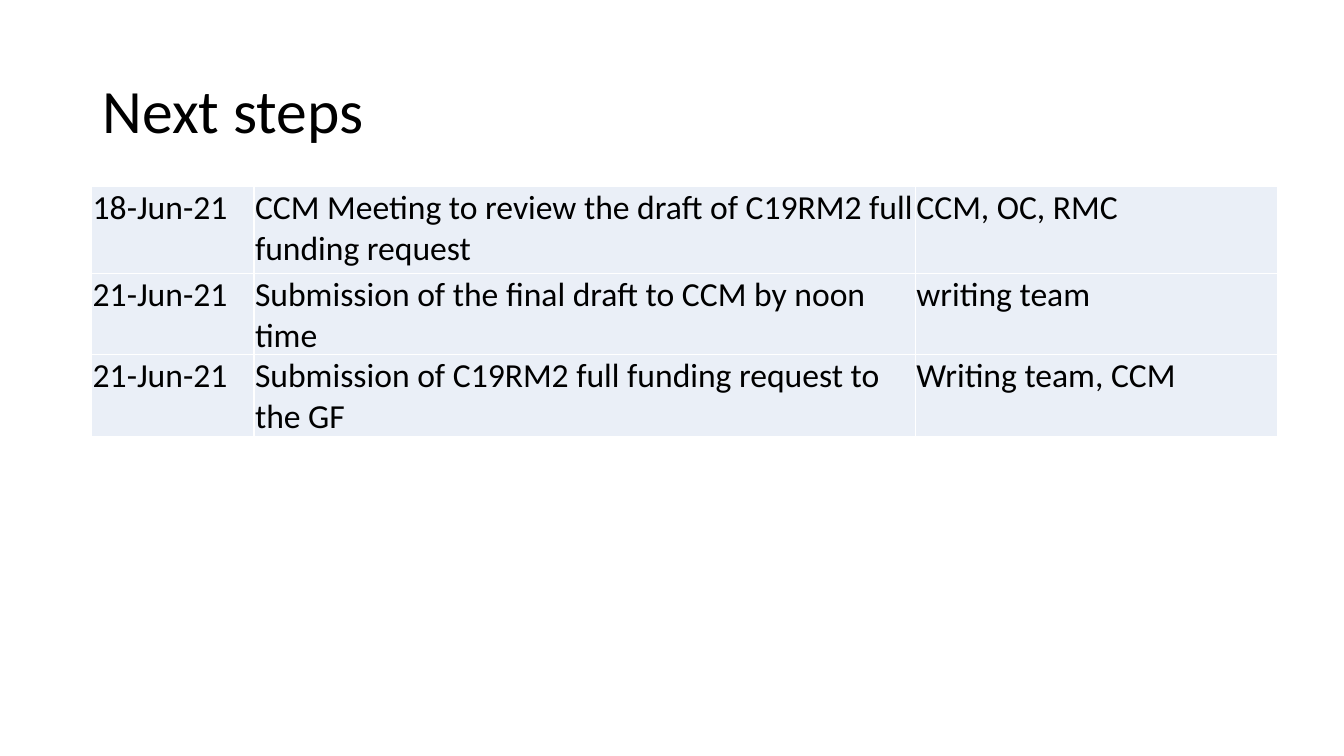
"""Build the "Next steps" slide: a title above a table of dates, tasks and owners."""
from lxml import etree
from pptx import Presentation, util as u
from pptx.dml.color import RGBColor
from pptx.enum import text
from pptx.oxml.ns import qn


def paint(color_format, value):
    color_format.rgb = RGBColor.from_string(value)


def write(paragraph, words, size):
    paragraph.text = words
    for key, value in {"name": "Calibri", "size": u.Pt(size), "bold": False}.items():
        setattr(paragraph.font, key, value)
    paint(paragraph.font.color, "000000")


deck = Presentation()
deck.slide_width, deck.slide_height = u.Inches(13.33), u.Inches(7.5)
slide = deck.slides.add_slide(deck.slide_layouts[6])

title = slide.shapes.add_textbox(
    u.Inches(0.92), u.Inches(0.4), u.Inches(11.5), u.Inches(1.45)
).text_frame
title.word_wrap = True
title.vertical_anchor = text.MSO_ANCHOR.MIDDLE
title.paragraphs[0].line_spacing = 0.9
write(title.paragraphs[0], "Next steps", 44)

steps = [
    ("18-Jun-21", "CCM Meeting to review the draft of C19RM2 full funding request", "CCM, OC, RMC"),
    ("21-Jun-21", "Submission of the final draft to CCM by noon time", "writing team"),
    ("21-Jun-21", "Submission of C19RM2 full funding request to the GF", "Writing team, CCM"),
]
column_widths = [1.61, 6.56, 3.59]
row_heights = [0.86, 0.43, 0.43]
cell_margins = {"margin_left": 0.01, "margin_right": 0.01, "margin_top": 0.01, "margin_bottom": 0}

schedule = slide.shapes.add_table(
    len(steps), len(column_widths), u.Inches(0.91), u.Inches(1.85),
    u.Inches(sum(column_widths)), u.Inches(sum(row_heights)),
).table
schedule.first_row = schedule.horz_banding = False
for column, width in zip(schedule.columns, column_widths):
    column.width = u.Inches(width)

for row, height, step in zip(schedule.rows, row_heights, steps):
    row.height = u.Inches(height)
    for cell, words in zip(row.cells, step):
        for side, margin in cell_margins.items():
            setattr(cell, side, u.Inches(margin))
        write(cell.text_frame.paragraphs[0], words, 24)
        properties = cell._tc.get_or_add_tcPr()
        for edge in ("a:lnL", "a:lnR", "a:lnT", "a:lnB"):
            border = etree.SubElement(properties, qn(edge), w=str(u.Pt(1)))
            border_fill = etree.SubElement(border, qn("a:solidFill"))
            etree.SubElement(border_fill, qn("a:srgbClr"), val="FFFFFF")
        cell.fill.solid()
        paint(cell.fill.fore_color, "EAEFF7")

deck.save("out.pptx")
